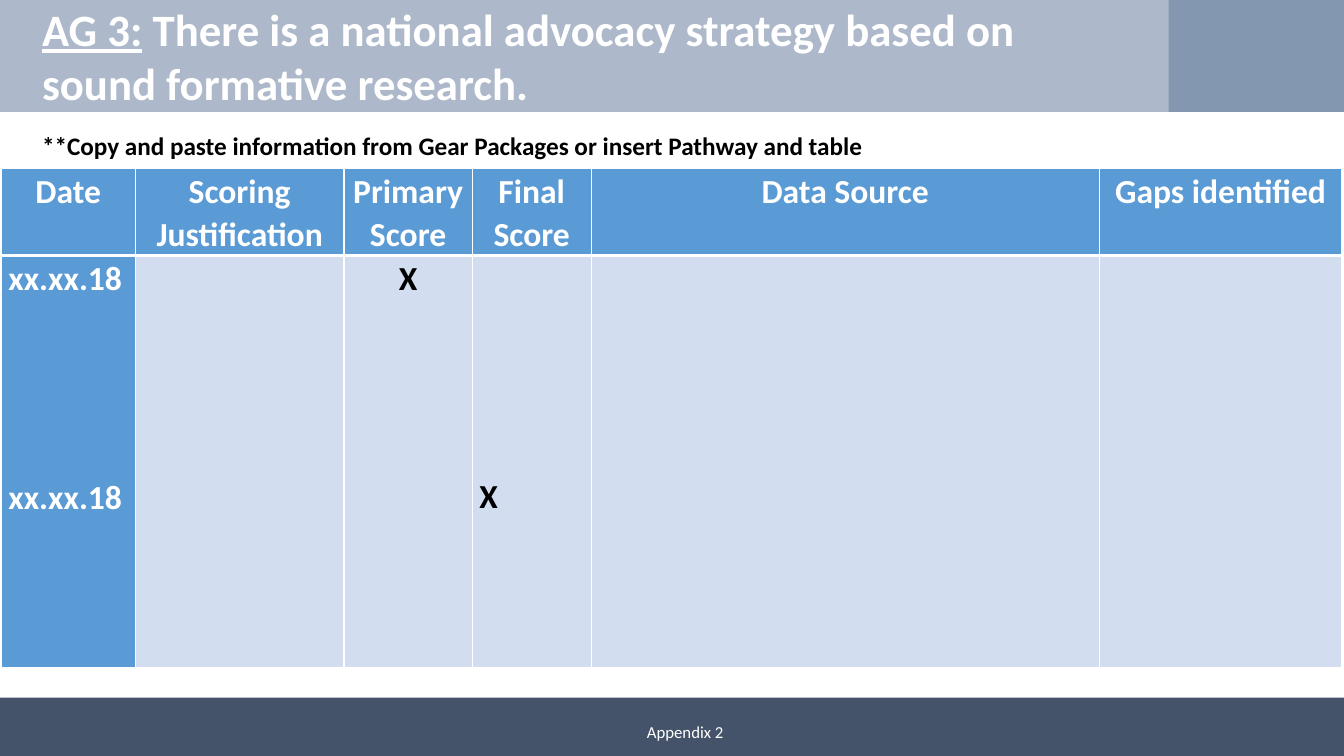
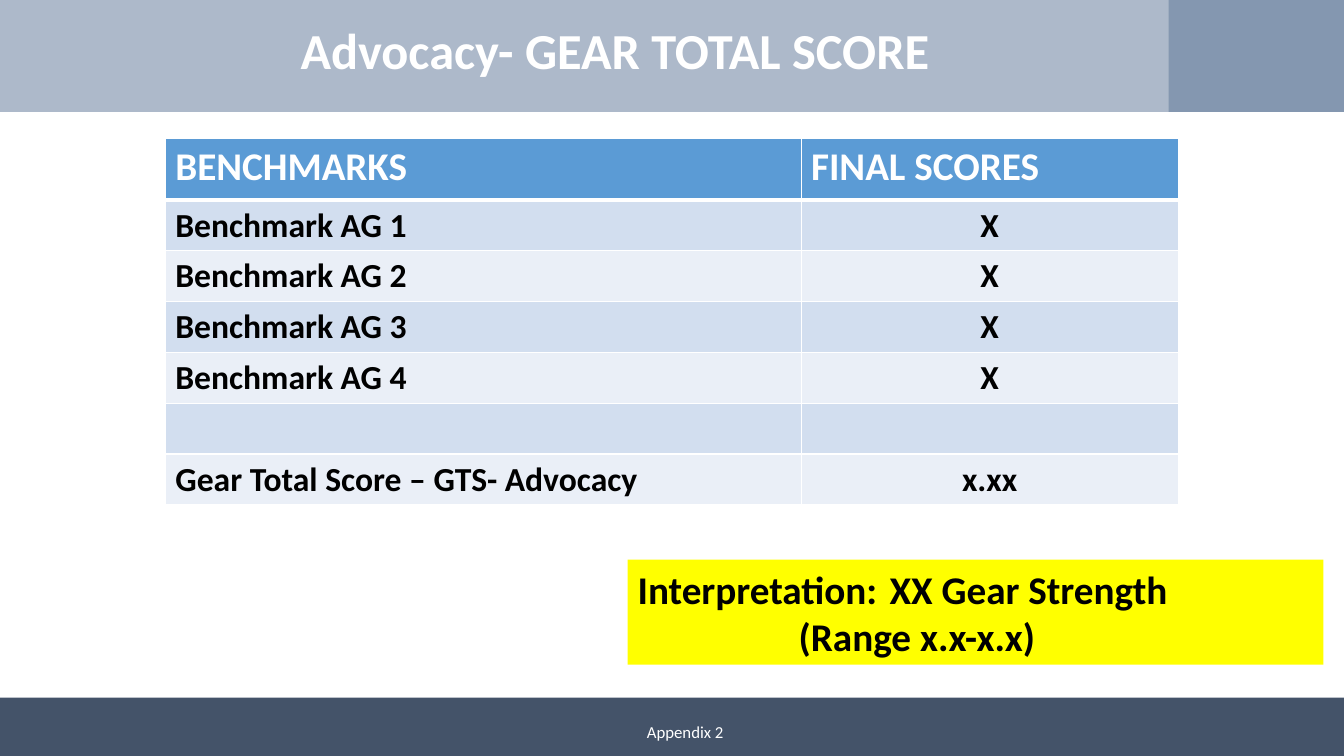
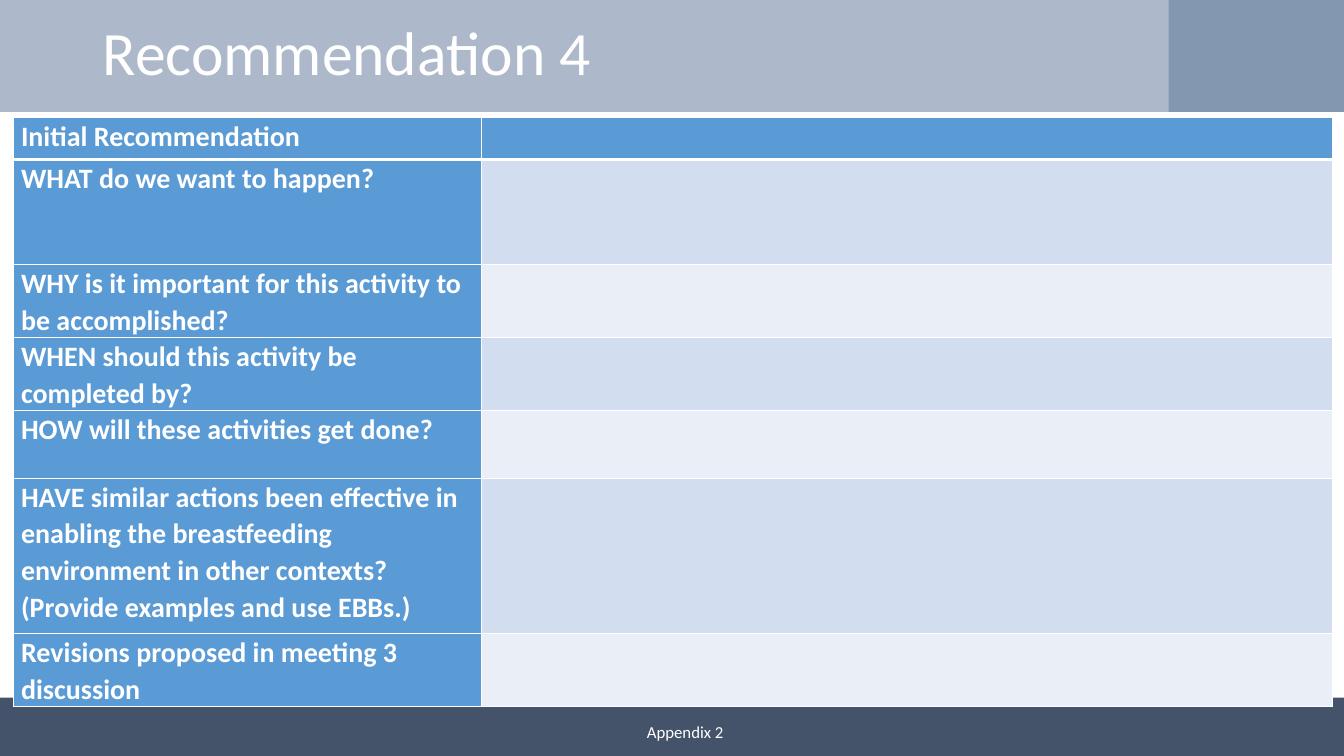
from dataclasses import dataclass

from lxml.etree import SubElement
from pptx import Presentation
from pptx.dml.color import RGBColor
from pptx.enum.shapes import MSO_SHAPE
from pptx.enum.text import MSO_ANCHOR, PP_ALIGN
from pptx.oxml.ns import qn
from pptx.util import Cm, Pt


@dataclass(frozen=True)
class Theme:
    font: str = "Calibri"
    white: str = "FFFFFF"
    black: str = "000000"
    band: str = "ADB9CA"
    corner: str = "8497B0"
    footer: str = "445369"
    header: str = "5B9BD5"
    stripes: tuple = ("D2DEEF", "EAEFF7")
    highlight: str = "FFFF00"
    footer_size: int = 12
    note_size: int = 18
    question_size: int = 20
    body_size: int = 24
    large_size: int = 28
    long_title_size: int = 32
    score_title_size: int = 36
    title_size: int = 44
    line_spacing: float = 1.07
    thin: int = 1
    thick: int = 3


@dataclass(frozen=True)
class Box:
    left: float
    top: float
    width: float
    height: float

    def lengths(self):
        return Cm(self.left), Cm(self.top), Cm(self.width), Cm(self.height)


THEME = Theme()
PAGE = Box(0, 0, 33.87, 19.05)
BAND_HEIGHT = 2.82
CORNER_WIDTH = 4.42
FOOTER_HEIGHT = 1.47
TIGHT = (0.18, 0, 0.18, 0)
LOOSE = (0.25, 0.13, 0.25, 0.13)
LEFT, CENTER = PP_ALIGN.LEFT, PP_ALIGN.CENTER


def write(frame, text, size, color=THEME.white, bold=False, underline=False,
          align=LEFT, line=None, before=None, indent=0, join=False):
    para = frame.paragraphs[-1]
    if para.runs and not join:
        para = frame.add_paragraph()
    if not join:
        para.alignment = align
        para.line_spacing = line
        para.space_before = before
        if indent:
            para._p.get_or_add_pPr().set("marL", str(Cm(indent)))
    span = para.add_run()
    span.text = text
    span.font.name = THEME.font
    span.font.size = Pt(size)
    span.font.bold = bold
    span.font.underline = underline
    span.font.color.rgb = RGBColor.from_string(color)


def add_text_box(page, box, anchor=MSO_ANCHOR.MIDDLE):
    frame = page.shapes.add_textbox(*box.lengths()).text_frame
    frame.word_wrap = True
    frame.vertical_anchor = anchor
    return frame


def add_panel(page, box, color):
    panel = page.shapes.add_shape(MSO_SHAPE.RECTANGLE, *box.lengths())
    panel.shadow.inherit = False
    panel.fill.solid()
    panel.fill.fore_color.rgb = RGBColor.from_string(color)
    panel.line.fill.background()
    return panel.text_frame


def add_page(deck):
    page = deck.slides.add_slide(deck.slide_layouts[6])
    add_panel(page, Box(0, 0, PAGE.width, BAND_HEIGHT), THEME.band)
    add_panel(page, Box(0, PAGE.height - FOOTER_HEIGHT, PAGE.width, FOOTER_HEIGHT),
              THEME.footer)
    add_panel(page, Box(PAGE.width - CORNER_WIDTH, 0, CORNER_WIDTH, BAND_HEIGHT),
              THEME.corner)
    write(add_text_box(page, Box(6.07, 17.93, 22.4, 1.02)), "Appendix 2",
          THEME.footer_size, align=CENTER)
    return page


def paint_cell(cell, color, top, bottom):
    properties = cell._tc.get_or_add_tcPr()
    edges = {"lnL": THEME.thin, "lnR": THEME.thin, "lnT": top, "lnB": bottom}
    for tag, width in edges.items():
        edge = SubElement(properties, qn(f"a:{tag}"), w=str(Pt(width)))
        fill = SubElement(edge, qn("a:solidFill"))
        SubElement(fill, qn("a:srgbClr"), val=THEME.white)
    cell.fill.solid()
    cell.fill.fore_color.rgb = RGBColor.from_string(color)


def add_grid(page, box, widths, heights, texts, header_size, body_size,
             header_aligns, body_aligns, label_column=False, margins=TIGHT,
             line=THEME.line_spacing):
    table = page.shapes.add_table(len(heights), len(widths), *box.lengths()).table
    for column, width in zip(table.columns, widths):
        column.width = Cm(width)
    for row, height in zip(table.rows, heights):
        row.height = Cm(height)
    for row_index, row_texts in enumerate(texts):
        is_header = row_index == 0
        size = header_size if is_header else body_size
        aligns = header_aligns if is_header else body_aligns
        for column_index, text in enumerate(row_texts):
            cell = table.cell(row_index, column_index)
            is_dark = is_header or (label_column and column_index == 0)
            paint_cell(cell,
                       THEME.header if is_dark else THEME.stripes[(row_index - 1) % 2],
                       top=THEME.thick if row_index == 1 else THEME.thin,
                       bottom=THEME.thick if is_header else THEME.thin)
            (cell.margin_left, cell.margin_top,
             cell.margin_right, cell.margin_bottom) = map(Cm, margins)
            if text:
                write(cell.text_frame, text, size,
                      THEME.white if is_dark else THEME.black, bold=True,
                      align=aligns[column_index], line=line)
    return table


def build_benchmark(deck):
    page = add_page(deck)
    title = add_text_box(page, Box(0.81, 0.38, 26.5, 2.03))
    write(title, "AG 3:", THEME.long_title_size, bold=True, underline=True)
    write(title, " There is a national advocacy strategy based on sound formative research.",
          THEME.long_title_size, bold=True, join=True)
    write(add_text_box(page, Box(0.81, 3.1, 28.52, 1.09), MSO_ANCHOR.TOP),
          "**Copy and paste information from Gear Packages or insert Pathway and table",
          THEME.note_size, THEME.black, bold=True, line=THEME.line_spacing)
    widths = (3.38, 5.26, 3.23, 3, 12.8, 6.12)
    heights = (2.2, 10.38)
    texts = (
        ("Date", "Scoring Justification", "Primary Score", "Final Score",
         "Data Source", "Gaps identified"),
        ("xx.xx.18", "", "X", "X", "", ""),
    )
    table = add_grid(page, Box(0.03, 4.24, sum(widths), sum(heights)), widths, heights,
                     texts, THEME.body_size, THEME.body_size, (CENTER,) * 6,
                     (LEFT, LEFT, CENTER, LEFT, LEFT, LEFT), label_column=True)
    write(table.cell(1, 0).text_frame, "xx.xx.18", THEME.body_size, bold=True,
          line=THEME.line_spacing, before=Pt(125))
    table.cell(1, 3).margin_top = Cm(5.5)


def build_total_score(deck):
    page = add_page(deck)
    write(add_text_box(page, Box(0, 0, 31, 2.5)), "Advocacy- GEAR TOTAL SCORE",
          THEME.score_title_size, bold=True, align=CENTER)
    interpretation = add_panel(page, Box(15.82, 14.1, 17.53, 2.65), THEME.highlight)
    interpretation.word_wrap = True
    write(interpretation, "Interpretation:\tXX Gear Strength", THEME.large_size,
          THEME.black, bold=True)
    write(interpretation, "(Range x.x-x.x)", THEME.large_size, THEME.black,
          bold=True, indent=4.06)
    widths = (16.02, 9.5)
    heights = (1.55,) + (1.28,) * 6
    texts = (
        ("BENCHMARKS", "FINAL SCORES"),
        *((f"Benchmark AG {number}", "X") for number in range(1, 5)),
        ("", ""),
        ("Gear Total Score – GTS- Advocacy", "x.xx"),
    )
    add_grid(page, Box(4.17, 3.49, sum(widths), sum(heights)), widths, heights, texts,
             THEME.large_size, THEME.body_size, (LEFT, LEFT), (LEFT, CENTER),
             margins=LOOSE, line=None)


def build_recommendation(deck):
    page = add_page(deck)
    write(add_text_box(page, Box(2.34, 0.38, 26.5, 2.03)), "Recommendation 4",
          THEME.title_size, line=Pt(46))
    widths = (11.79, 21.45)
    heights = (1.07, 2.64, 1.84, 1.84, 1.71, 3.91, 1.84)
    questions = (
        "Initial Recommendation",
        "WHAT do we want to happen?",
        "WHY is it important for this activity to be accomplished?",
        "WHEN should this activity be completed by?",
        "HOW will these activities get done?",
        "HAVE similar actions been effective in enabling the breastfeeding "
        "environment in other contexts? (Provide examples and use EBBs.)",
        "Revisions proposed in meeting 3 discussion",
    )
    add_grid(page, Box(0.35, 2.95, sum(widths), sum(heights)), widths, heights,
             [(question, "") for question in questions], THEME.question_size,
             THEME.question_size, (LEFT, LEFT), (LEFT, LEFT), label_column=True)


def main():
    deck = Presentation()
    deck.slide_width = Cm(PAGE.width)
    deck.slide_height = Cm(PAGE.height)
    build_benchmark(deck)
    build_total_score(deck)
    build_recommendation(deck)
    deck.save("out.pptx")


if __name__ == "__main__":
    main()
